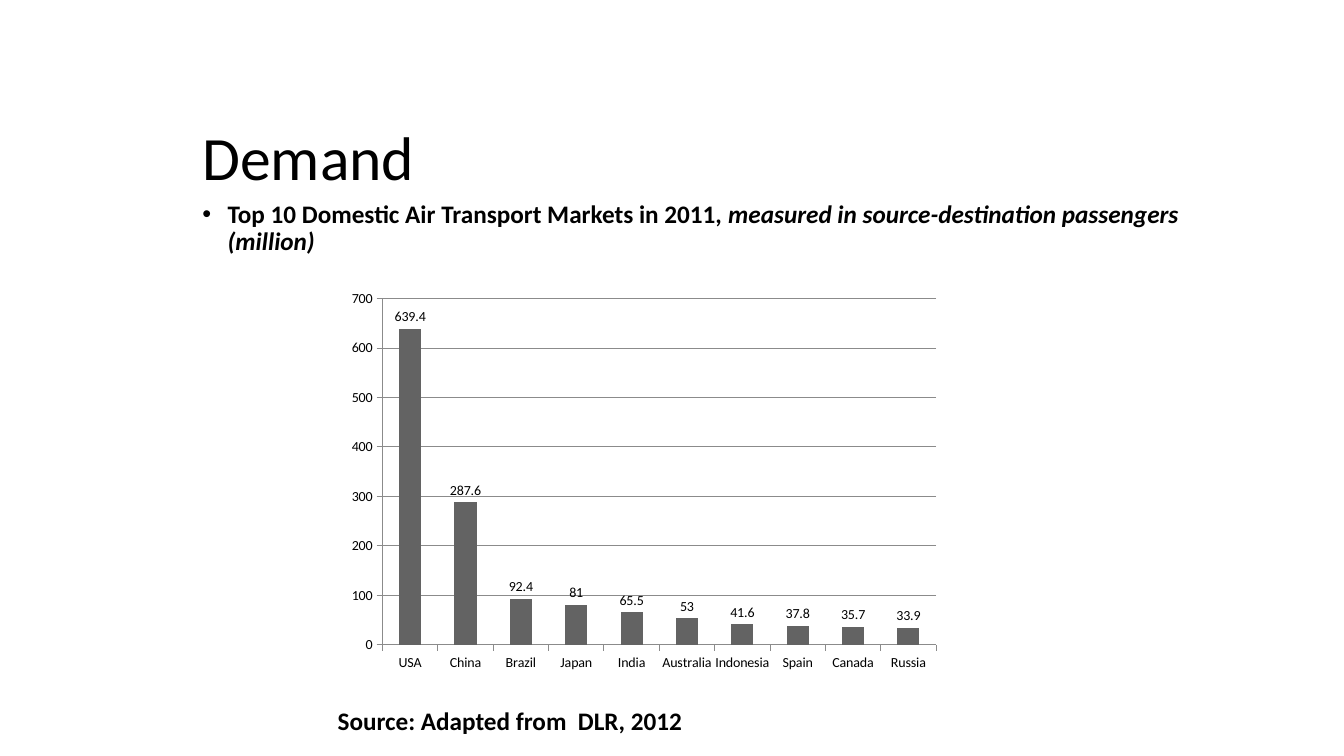
"""Build the slide on demand in domestic air transport markets."""
from dataclasses import dataclass

from lxml import etree
from pptx import Presentation
from pptx.chart.data import CategoryChartData
from pptx.dml.color import RGBColor
from pptx.enum.chart import XL_CHART_TYPE, XL_LABEL_POSITION, XL_TICK_MARK
from pptx.enum.text import MSO_ANCHOR
from pptx.oxml import parse_xml
from pptx.oxml.ns import nsdecls, qn
from pptx.slide import Slide
from pptx.util import Inches, Pt

COLORS = {"text": "000000", "bar": "636363", "line": "8B8B8B"}
FONT = "Calibri"
MARKETS = {
    "USA": 639.4, "China": 287.6, "Brazil": 92.4, "Japan": 81, "India": 65.5,
    "Australia": 53, "Indonesia": 41.6, "Spain": 37.8, "Canada": 35.7, "Russia": 33.9,
}
PLOT_LAYOUT = {"x": 0.09, "y": 0.05, "w": 0.91, "h": 0.89}


@dataclass
class TextBlock:
    left: float
    top: float
    width: float
    height: float
    text: str
    size: float
    bold: bool = True
    italic_tail: str = ""
    bullet: bool = False
    wrap: bool = True
    line_spacing: float = 1.0
    anchor: MSO_ANCHOR = MSO_ANCHOR.TOP


TEXT_BLOCKS = [
    TextBlock(1.91, 1.35, 10.5, 0.48, "Demand", 44, bold=False,
              line_spacing=0.9, anchor=MSO_ANCHOR.MIDDLE),
    TextBlock(1.91, 1.95, 10.5, 4.7, "Top 10 Domestic Air Transport Markets in 2011, ", 18,
              italic_tail="measured in source-destination passengers (million)",
              bullet=True, line_spacing=0.9),
    TextBlock(3.25, 6.95, 3.65, 0.4, "Source: Adapted from  DLR, 2012", 18, wrap=False),
]


def color(name: str) -> RGBColor:
    return RGBColor.from_string(COLORS[name])


def add_text(page: Slide, block: TextBlock) -> None:
    box = page.shapes.add_textbox(Inches(block.left), Inches(block.top),
                                  Inches(block.width), Inches(block.height))
    frame = box.text_frame
    frame.word_wrap = block.wrap
    frame.vertical_anchor = block.anchor
    para = frame.paragraphs[0]
    para.text = block.text
    para.line_spacing = block.line_spacing
    if block.bullet:
        properties = para._p.get_or_add_pPr()
        properties.set("marL", str(Inches(0.25)))
        properties.set("indent", str(Inches(-0.25)))
        properties.append(parse_xml(f'<a:buFont {nsdecls("a")} typeface="Arial"/>'))
        properties.append(parse_xml(f'<a:buChar {nsdecls("a")} char="•"/>'))
    if block.italic_tail:
        tail = para.add_run()
        tail.text = block.italic_tail
        tail.font.italic = True
    for span in para.runs:
        span.font.name = FONT
        span.font.size = Pt(block.size)
        span.font.bold = block.bold
        span.font.color.rgb = color("text")


def add_market_chart(page: Slide) -> None:
    data = CategoryChartData()
    data.categories = list(MARKETS)
    data.add_series("Series 1", list(MARKETS.values()))
    chart = page.shapes.add_chart(XL_CHART_TYPE.COLUMN_CLUSTERED, Inches(3.25), Inches(2.77),
                                  Inches(6.04), Inches(3.88), data).chart
    chart.has_legend = False
    chart.has_title = False
    chart.font.name = FONT
    chart.font.size = Pt(10)
    chart.font.color.rgb = color("text")

    value_axis = chart.value_axis
    value_axis.minimum_scale, value_axis.maximum_scale, value_axis.major_unit = 0, 700, 100
    value_axis.has_major_gridlines = True
    for axis in (chart.category_axis, value_axis):
        axis.major_tick_mark = XL_TICK_MARK.OUTSIDE
        axis.minor_tick_mark = XL_TICK_MARK.NONE
    for line in (chart.category_axis.format.line, value_axis.format.line,
                 value_axis.major_gridlines.format.line):
        line.color.rgb = color("line")
        line.width = Pt(0.75)

    plot = chart.plots[0]
    plot.gap_width = 150
    plot.vary_by_categories = False
    fill = plot.series[0].format.fill
    fill.solid()
    fill.fore_color.rgb = color("bar")
    plot.has_data_labels = True
    plot.data_labels.show_value = True
    plot.data_labels.number_format = "General"
    plot.data_labels.number_format_is_linked = False
    plot.data_labels.position = XL_LABEL_POSITION.OUTSIDE_END
    set_plot_layout(chart._chartSpace.chart.plotArea)


def set_plot_layout(plot_area: etree.ElementBase) -> None:
    for layout in plot_area.findall(qn("c:layout")):
        plot_area.remove(layout)
    layout = etree.Element(qn("c:layout"))
    manual = etree.SubElement(layout, qn("c:manualLayout"))
    settings = {"layoutTarget": "inner", "xMode": "edge", "yMode": "edge", **PLOT_LAYOUT}
    for tag, value in settings.items():
        etree.SubElement(manual, qn(f"c:{tag}")).set("val", str(value))
    plot_area.insert(0, layout)


def main() -> None:
    deck = Presentation()
    deck.slide_width, deck.slide_height = Inches(13.33), Inches(7.5)
    page = deck.slides.add_slide(deck.slide_layouts[6])
    for block in TEXT_BLOCKS:
        add_text(page, block)
    add_market_chart(page)
    deck.save("out.pptx")


if __name__ == "__main__":
    main()
